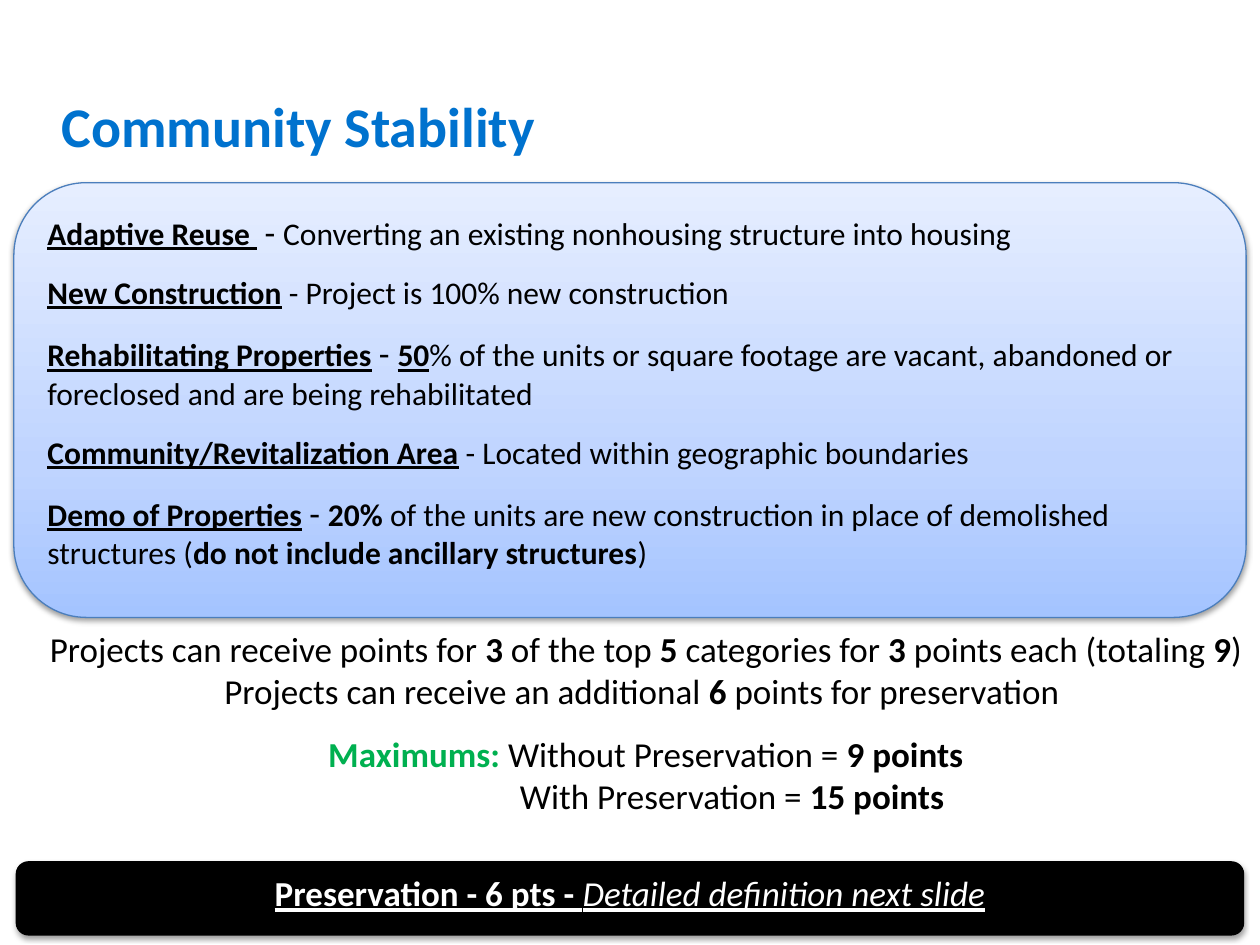
from copy import deepcopy
from lxml import etree
from pptx import Presentation
from pptx import util as u
from pptx.dml.color import RGBColor
from pptx.enum import shapes, text
from pptx.oxml import ns

HUES = {"title": "0072CE", "ink": "000000", "green": "00B050",
        "white": "FFFFFF", "edge": "4B7EBC"}
GRADE = [(0, "A4C4FF"), (0.35, "BFD4FF"), (1, "E6EEFF")]


def write(frame, lines, size, hue="ink", align=None, after=0):
    """Fill a frame; each run is (words, marks b/i/u, optional size, optional hue)."""
    frame.word_wrap = True
    for n, line in enumerate(lines):
        para = frame.paragraphs[0] if n == 0 else frame.add_paragraph()
        para.alignment = align or text.PP_ALIGN.LEFT
        para.space_after = u.Pt(after)
        for words, marks, *more in line:
            run = para.add_run()
            run.text = words
            font = run.font
            font.name = "Calibri"
            font.size = u.Pt(more[0] if more else size)
            font.bold = "b" in marks
            font.italic = "i" in marks
            font.underline = "u" in marks
            tint = more[1] if len(more) > 1 else hue
            font.color.rgb = RGBColor.from_string(HUES[tint])


def panel(left, top, width, height, edge):
    """Add a rounded box with a thin edge and a soft shadow below it."""
    box = slide.shapes.add_shape(
        shapes.MSO_SHAPE.ROUNDED_RECTANGLE, u.Inches(left), u.Inches(top),
        u.Inches(width), u.Inches(height))
    box.fill.solid()
    box.fill.fore_color.rgb = RGBColor.from_string(HUES["ink"])
    box.line.color.rgb = RGBColor.from_string(HUES[edge])
    box.line.width = u.Pt(0.75)
    box.shadow.inherit = False
    cast = etree.SubElement(
        box._element.spPr.find(ns.qn("a:effectLst")), ns.qn("a:outerShdw"),
        blurRad=str(u.Pt(3.1)), dist=str(u.Pt(1.6)), dir="5400000", rotWithShape="0")
    tone = etree.SubElement(cast, ns.qn("a:srgbClr"), val=HUES["ink"])
    etree.SubElement(tone, ns.qn("a:alpha"), val="38000")
    box.text_frame.vertical_anchor = text.MSO_ANCHOR.TOP
    return box


deck = Presentation()
deck.slide_width, deck.slide_height = u.Inches(10), u.Inches(7.5)
slide = deck.slides.add_slide(deck.slide_layouts[6])
mid = text.PP_ALIGN.CENTER

# Title
title = slide.shapes.add_textbox(
    u.Inches(0.39), u.Inches(0.68), u.Inches(8.03), u.Inches(0.66))
write(title.text_frame, [[("Community Stability", "b")]], 32, "title")

# Point totals
total = slide.shapes.add_textbox(
    u.Inches(0.13), u.Inches(4.92), u.Inches(9.99), u.Inches(1.62))
total.text_frame.vertical_anchor = text.MSO_ANCHOR.MIDDLE
write(total.text_frame, [
    [("Projects can receive points for ", ""), ("3", "b"), (" of the top ", ""),
     ("5", "b"), (" categories for ", ""), ("3", "b"),
     (" points each (totaling ", ""), ("9", "b"), (")", "")],
    [("Projects can receive an additional ", ""), ("6", "b"),
     (" points for preservation ", "")],
    [("Maximums:", "b", 20, "green"), (" Without Preservation = ", ""),
     ("9 points", "b")],
    [("With Preservation = ", ""), ("15 points", "b")],
], 20, align=mid)
paras = total.text_frame.paragraphs
paras[1].space_after = u.Pt(12)
paras[3]._p.get_or_add_pPr().set("marL", str(u.Inches(1.37)))

# Category card
card = panel(0.11, 1.45, 9.78, 3.45, "edge")
card.fill.gradient()
card.fill.gradient_angle = 90
stops = card._element.spPr.find(ns.qn("a:gradFill")).find(ns.qn("a:gsLst"))
stops.append(deepcopy(stops[-1]))
for stop, (spot, shade) in zip(card.fill.gradient_stops, GRADE):
    stop.position = spot
    stop.color.rgb = RGBColor.from_string(shade)
dash = [(" ", ""), ("- ", "", 20)]
write(card.text_frame, [
    [("Adaptive Reuse ", "bu"), *dash,
     ("Converting an existing nonhousing structure into housing", "")],
    [("New Construction", "bu"), (" - Project is 100% new construction", "")],
    [("Rehabilitating Properties", "bu"), *dash, ("50", "bu"),
     ("% of the units or square footage are vacant, abandoned or "
      "foreclosed and are being rehabilitated", "")],
    [("Community/Revitalization Area", "bu"),
     (" - Located within geographic boundaries", "")],
    [("Demo of Properties", "bu"), *dash, ("20% ", "b"),
     ("of the units are new construction in place of demolished structures (", ""),
     ("do not include ancillary structures", "b"), (")", "")],
], 18, after=12)

# Preservation bar
bar = panel(0.13, 6.84, 9.74, 0.58, "ink")
write(bar.text_frame, [[("Preservation - 6 pts - ", "bu"),
                        ("Detailed definition next slide", "iu")]],
      20, "white", mid, 12)

deck.save("out.pptx")
